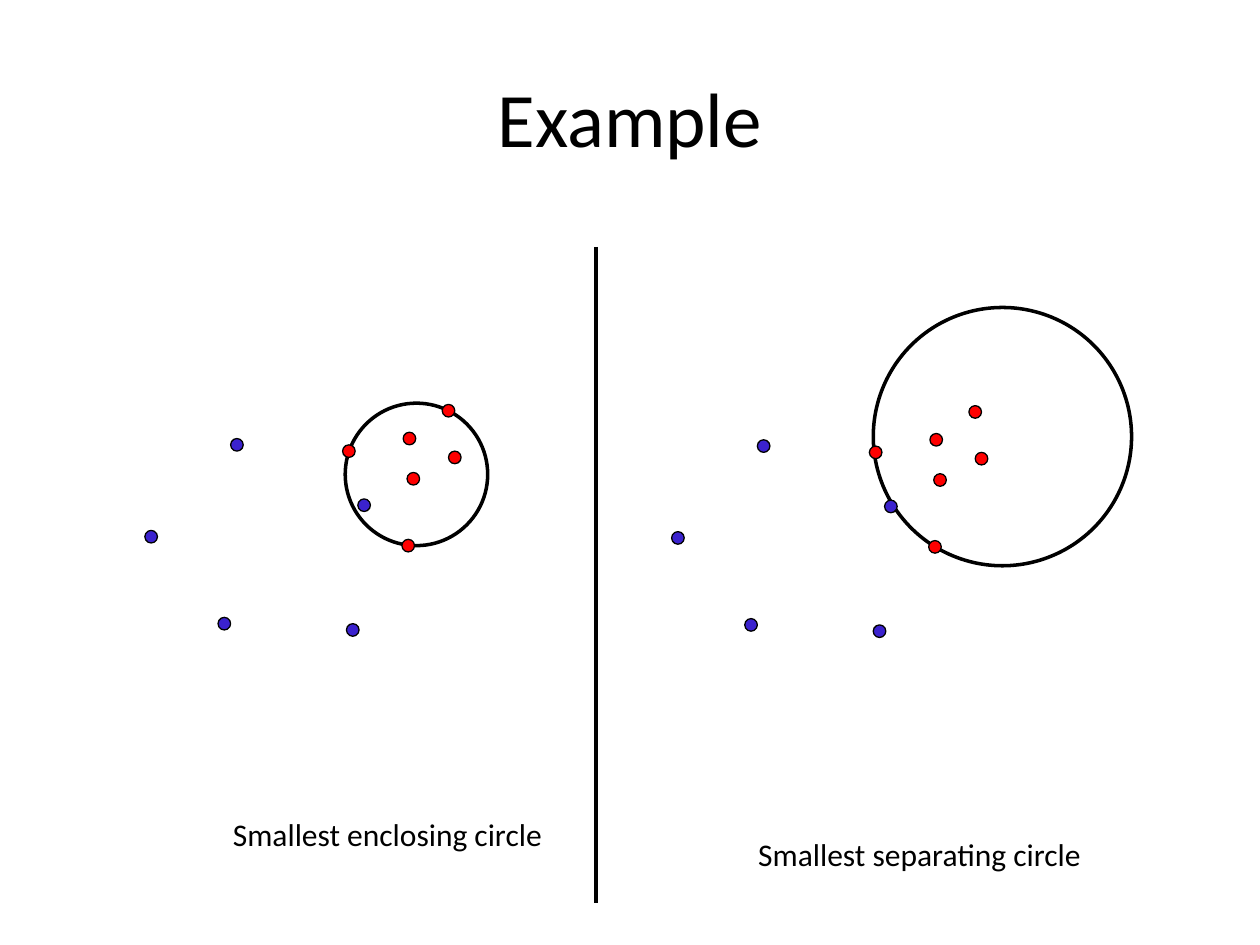
from pptx import Presentation
from pptx.dml.color import RGBColor
from pptx.enum.shapes import MSO_CONNECTOR as CONN, MSO_SHAPE as SHAPE
from pptx.enum.text import MSO_ANCHOR as ANCHOR, MSO_AUTO_SIZE as FIT, PP_ALIGN as ALIGN
from pptx.oxml.ns import qn
from pptx.util import Pt

COLORS = {"black": "000000", "blue": "3B22CE", "red": "FF0000"}
DOT = 7.2
# Top-left corners of the dots in the left panel
POINTS = {
    "blue": [(198, 356.4), (124.6, 352.8), (82.8, 303.1), (131.8, 250.6), (204.5, 285.1)],
    "red": [(195.8, 254.2), (229.7, 308.2), (252.7, 231.1), (230.4, 247), (232.6, 270),
            (256.3, 257.8)],
}
RIGHT_PANEL_SHIFT = (301, 0.72)


class Sketch:
    def __init__(self, slide, font="Calibri"):
        self.slide = slide
        self.font = font

    def color(self, name):
        return RGBColor.from_string(COLORS[name])

    def text(self, content, x, y, w, h, size, align=ALIGN.LEFT, anchor=ANCHOR.TOP, wrap=False):
        tf = self.slide.shapes.add_textbox(Pt(x), Pt(y), Pt(w), Pt(h)).text_frame
        tf.word_wrap = wrap
        tf.auto_size = FIT.NONE if wrap else FIT.SHAPE_TO_FIT_TEXT
        tf.vertical_anchor = anchor
        p = tf.paragraphs[0]
        p.alignment = align
        r = p.add_run()
        r.text = content
        r.font.name = self.font
        r.font.size = Pt(size)
        r.font.color.rgb = self.color("black")

    def circle(self, shapes, x, y, diameter, line_width, fill=None):
        sp = shapes.add_shape(SHAPE.OVAL, Pt(x), Pt(y), Pt(diameter), Pt(diameter))
        sp.shadow.inherit = False
        if fill:
            sp.fill.solid()
            sp.fill.fore_color.rgb = self.color(fill)
        else:
            sp.fill.background()
        sp.line.color.rgb = self.color("black")
        sp.line.width = Pt(line_width)

    def point_set(self, shapes, circle, shift=(0, 0)):
        """Draw the large circle (x, y, diameter), then the shared dots moved by shift."""
        self.circle(shapes, *circle, line_width=2)
        dx, dy = shift
        for fill, corners in POINTS.items():
            for x, y in corners:
                self.circle(shapes, x + dx, y + dy, DOT, 0.75, fill)

    def line(self, x1, y1, x2, y2, width):
        ln = self.slide.shapes.add_connector(CONN.STRAIGHT, Pt(x1), Pt(y1), Pt(x2), Pt(y2))
        ln.line.color.rgb = self.color("black")
        ln.line.width = Pt(width)
        sp_pr = ln._element.spPr
        sp_pr.append(sp_pr.makeelement(qn("a:effectLst"), {}))


def main():
    prs = Presentation()
    prs.slide_width, prs.slide_height = Pt(720), Pt(540)
    s = prs.slides.add_slide(prs.slide_layouts[6])
    sketch = Sketch(s)

    sketch.text("Example", 36, 21.6, 648, 90, 44, ALIGN.CENTER, ANCHOR.MIDDLE, wrap=True)
    sketch.point_set(s.shapes.add_group_shape().shapes, (197.3, 230.4, 81.4))
    sketch.point_set(s.shapes, (499, 175.7, 147.6), RIGHT_PANEL_SHIFT)
    sketch.line(340.6, 141.1, 340.6, 516.2, 2)
    sketch.text("Smallest enclosing circle", 126, 462.2, 193, 29, 18)
    sketch.text("Smallest separating circle", 426.2, 473.8, 200.9, 29, 18)

    prs.save("out.pptx")


if __name__ == "__main__":
    main()
